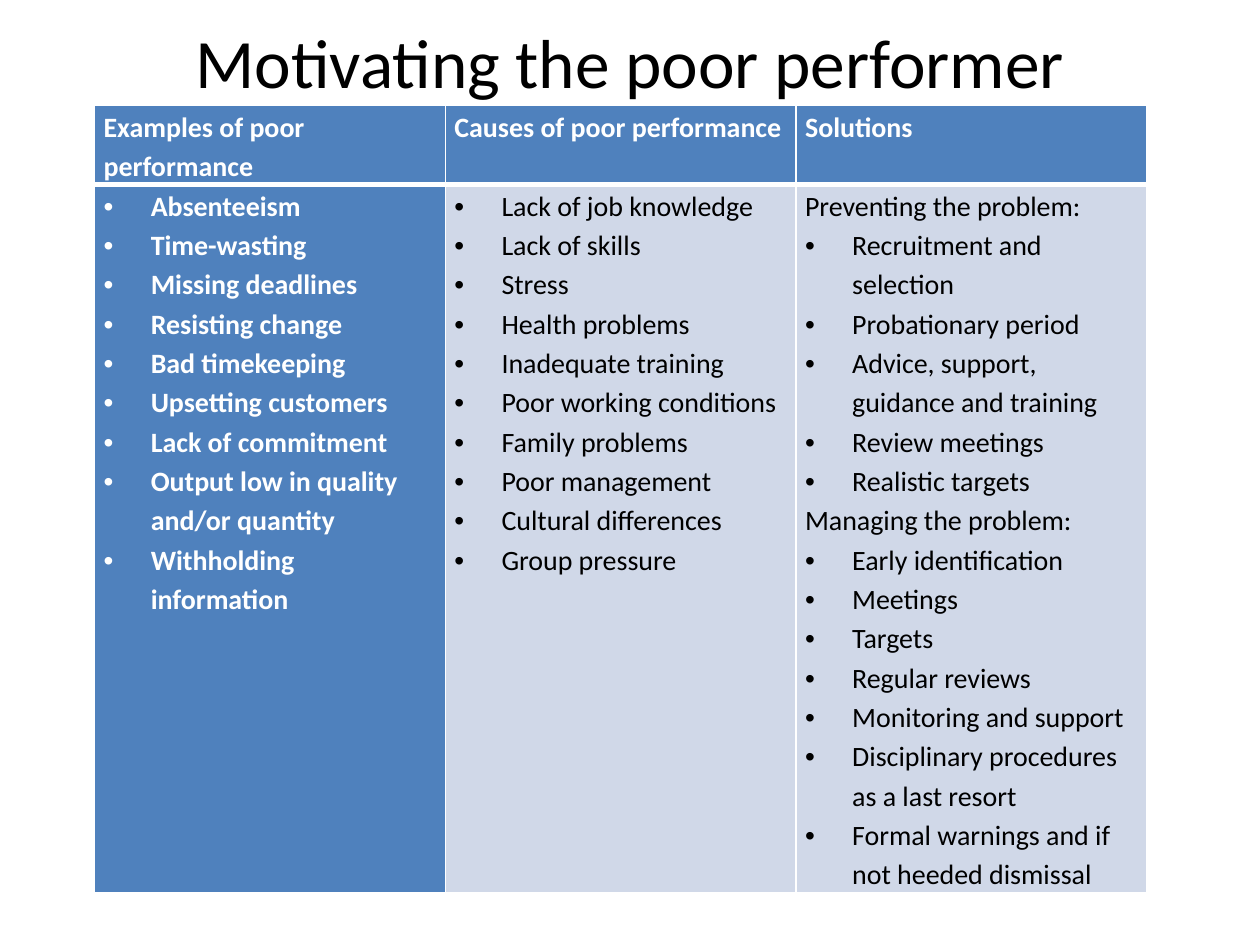
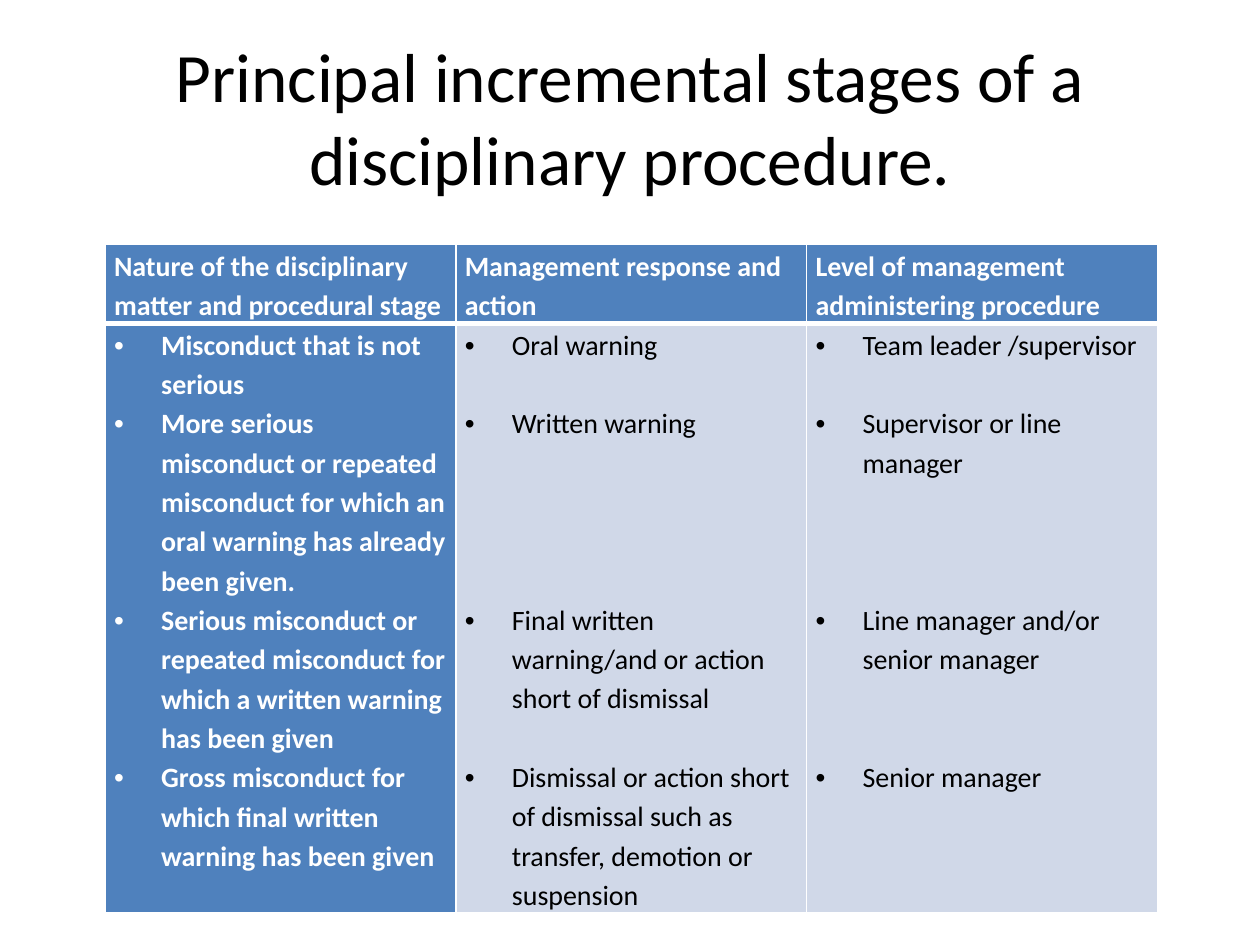
from itertools import zip_longest

from lxml.etree import SubElement
from pptx import Presentation
from pptx.dml.color import RGBColor
from pptx.enum.text import MSO_ANCHOR, MSO_AUTO_SIZE, PP_ALIGN
from pptx.oxml import parse_xml
from pptx.oxml.ns import nsdecls, qn
from pptx.util import Cm, Pt

COLORS = {"blue": "4F81BD", "pale": "D0D8E8", "white": "FFFFFF", "black": "000000"}
FONT = "Calibri"
TITLE_SIZE = 39.6
CELL_SIZE = 16
LINE = 22.46  # height in points of one table line at 1.15 spacing
INDENT = Cm(0.95)
COL_WIDTH = Cm(7.07)
HEAD_HEIGHT = Cm(1.58)


def color(name):
    return RGBColor.from_string(COLORS[name])


class Deck:
    def __init__(self):
        self.show = Presentation()
        self.show.slide_width, self.show.slide_height = Cm(25.4), Cm(19.05)
        self.slide = None

    def new_slide(self, title, top, height):
        self.slide = self.show.slides.add_slide(self.show.slide_layouts[5])
        shape = self.slide.shapes.title
        shape.left, shape.top = Cm(1.27), Cm(top)
        shape.width, shape.height = Cm(22.86), Cm(height)
        frame = shape.text_frame
        frame.text = title
        frame.word_wrap = True
        frame.auto_size = MSO_AUTO_SIZE.NONE
        frame.vertical_anchor = MSO_ANCHOR.MIDDLE
        para = frame.paragraphs[0]
        para.alignment = PP_ALIGN.CENTER
        self.style(para, TITLE_SIZE, "black")

    def style(self, para, size, shade, bold=False):
        for run in para.runs:
            font = run.font
            font.name, font.size, font.bold = FONT, Pt(size), bold
            font.color.rgb = color(shade)

    def bullet(self, para):
        props = para._p.get_or_add_pPr()
        props.set("marL", str(INDENT))
        props.set("indent", str(-INDENT))
        SubElement(props, qn("a:buFont")).set("typeface", "Arial")
        SubElement(props, qn("a:buChar")).set("char", "•")

    def border(self, cell, is_head):
        """Draw thin white edges, with a thick one under the head row."""
        thick = "B" if is_head else "T"
        props = cell._tc.get_or_add_tcPr()
        for place, side in enumerate("LRTB"):
            width = Pt(3 if side == thick else 1)
            props.insert(place, parse_xml(
                f'<a:ln{side} {nsdecls("a")} w="{width}"><a:solidFill>'
                f'<a:srgbClr val="{COLORS["white"]}"/></a:solidFill></a:ln{side}>'))

    def fill_cell(self, cell, lines, gaps=(), is_head=False, is_first=False):
        """Fill a cell; gaps holds the number of free lines after each item."""
        strong = is_head or is_first
        cell.margin_left = cell.margin_right = Cm(0.18)
        cell.margin_top = cell.margin_bottom = 0
        cell.vertical_anchor = MSO_ANCHOR.TOP
        cell.fill.solid()
        cell.fill.fore_color.rgb = color("blue" if strong else "pale")
        self.border(cell, is_head)
        cell.text_frame.text = "\n".join(lines)
        paras = cell.text_frame.paragraphs
        for para, gap in zip_longest(paras, gaps, fillvalue=0):
            para.line_spacing = 1.15
            para.space_before = Pt(0)
            para.space_after = Pt(gap * LINE)
            if not is_head and not para.text.endswith(":"):
                self.bullet(para)
            self.style(para, CELL_SIZE, "white" if strong else "black", strong)

    def table(self, left, top, height, columns):
        """Add a table from (head, items, gaps) columns."""
        frame = self.slide.shapes.add_table(
            2, len(columns), Cm(left), Cm(top),
            COL_WIDTH * len(columns), HEAD_HEIGHT + Cm(height))
        grid = frame.table
        grid.horz_banding = False
        grid.rows[0].height, grid.rows[1].height = HEAD_HEIGHT, Cm(height)
        for index, (head, items, gaps) in enumerate(columns):
            grid.columns[index].width = COL_WIDTH
            self.fill_cell(grid.cell(0, index), [head], is_head=True)
            self.fill_cell(grid.cell(1, index), items, gaps, is_first=index == 0)


POOR_WORK = [
    ("Examples of poor performance", [
        "Absenteeism", "Time-wasting", "Missing deadlines", "Resisting change",
        "Bad timekeeping", "Upsetting customers", "Lack of commitment",
        "Output low in quality and/or quantity", "Withholding information"], ()),
    ("Causes of poor performance", [
        "Lack of job knowledge", "Lack of skills", "Stress", "Health problems",
        "Inadequate training", "Poor working conditions", "Family problems",
        "Poor management", "Cultural differences", "Group pressure"], ()),
    ("Solutions", [
        "Preventing the problem:", "Recruitment and selection",
        "Probationary period", "Advice, support, guidance and training",
        "Review meetings", "Realistic targets",
        "Managing the problem:", "Early identification", "Meetings", "Targets",
        "Regular reviews", "Monitoring and support",
        "Disciplinary procedures as a last resort",
        "Formal warnings and if not heeded dismissal"], ()),
]

STAGES = [
    ("Nature of the disciplinary matter and procedural stage", [
        "Misconduct that is not serious",
        "More serious misconduct or repeated misconduct for which an oral "
        "warning has already been given.",
        "Serious misconduct or repeated misconduct for which a written "
        "warning has been given",
        "Gross misconduct for which final written warning has been given"], ()),
    ("Management response and action", [
        "Oral warning", "Written warning",
        "Final written warning/and or action short of dismissal",
        "Dismissal or action short of dismissal such as transfer, demotion or "
        "suspension"], (1, 4, 1)),
    ("Level of management administering procedure", [
        "Team leader /supervisor", "Supervisor or line manager",
        "Line manager and/or senior manager", "Senior manager"], (1, 3, 2)),
]


def main():
    deck = Deck()
    deck.new_slide("Motivating the poor performer", 0.33, 1.8)
    deck.table(1.91, 2.13, 14.25, POOR_WORK)
    deck.new_slide("Principal incremental stages of a disciplinary procedure.",
                   0.76, 3.18)
    deck.table(2.12, 4.93, 11.88, STAGES)
    deck.show.save("out.pptx")


if __name__ == "__main__":
    main()
